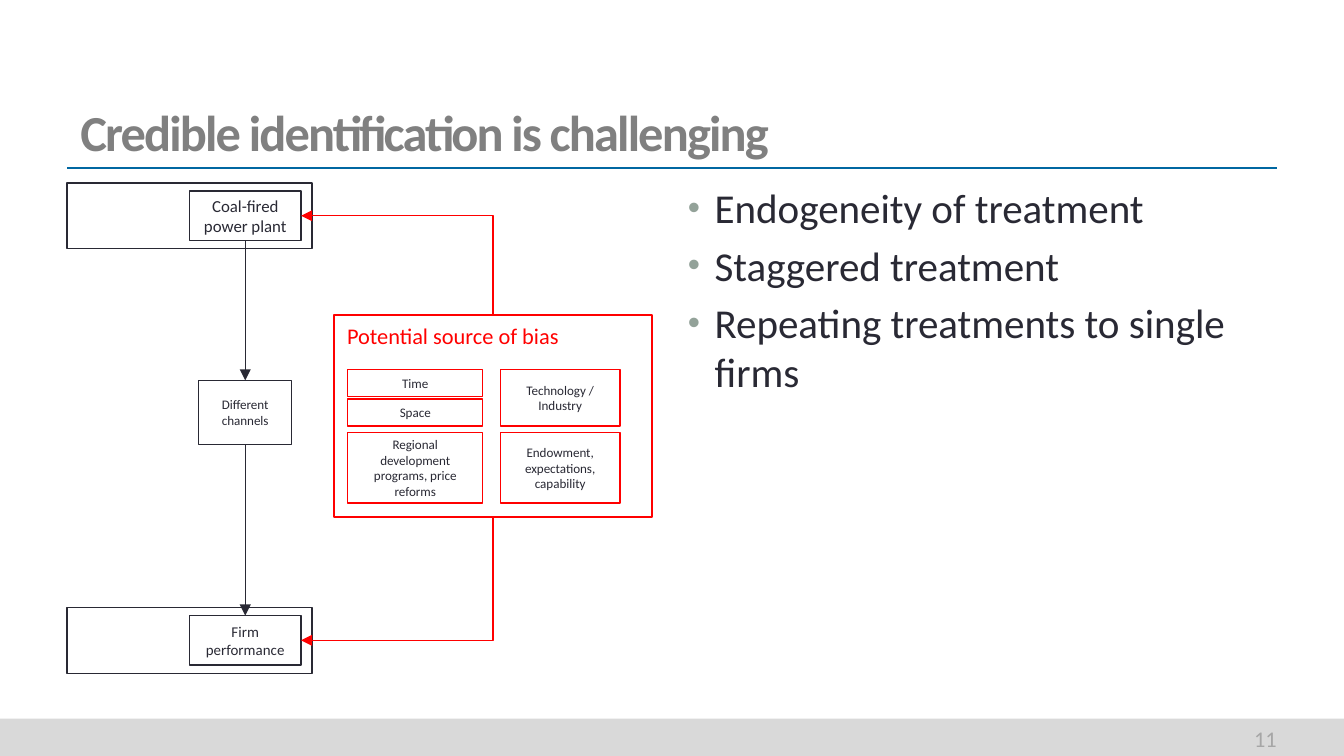
from pptx import Presentation
from pptx import util as u
from pptx.dml.color import RGBColor
from pptx.enum import shapes, text
from pptx.oxml.ns import qn
from lxml import etree

Pt = u.Pt
FONT = "Calibri"
COLORS = {"ink": "292934", "bias": "FF0000", "rule": "0067A1", "bar": "D9D9D9",
          "title": "808080", "number": "A6A6A6", "bullet": "93A299"}

# Content
TITLE = "Credible identification is challenging"
PAGE = "11"
POINTS = ["Endogeneity of treatment", "Staggered treatment",
          "Repeating treatments to single firms"]
BIAS = "Potential source of bias"
ENDS = [("Coal-fired power plant", 9, 98), ("Firm performance", 8, 325.5)]  # text, size, top
CHANNELS = "Different channels"
FACTORS = [  # text, column, top, height
    ("Space", 0, 213.8, 14.4),
    ("Technology / Industry", 1, 198, 30.3),
    ("Endowment, expectations, capability", 1, 231.8, 37.7),
    ("Regional development programs, price reforms", 0, 231.8, 37.7),
    ("Time", 0, 198, 14.4),
]

# Geometry
WIDTH, HEIGHT = 720, 405
MARGIN = 36
FRAME_W, FRAME_H = 131.2, 35.2
END_LEFT, END_W, END_H, END_INSET = 101.5, 59.8, 26.6, 4.3
CHANNEL_TOP, CHANNEL_W, CHANNEL_H = 203.8, 49.9, 34.2
BIAS_BOX = (178.8, 169, 170.5, 108)
COLUMNS = [(186.3, 72.3), (268, 64.3)]  # left, width

deck = Presentation()
deck.slide_width, deck.slide_height = Pt(WIDTH), Pt(HEIGHT)
slide = deck.slides.add_slide(deck.slide_layouts[6])


def rgb(name):
    return RGBColor.from_string(COLORS[name])


def write(shape, lines, size, color, bold=False, align=text.PP_ALIGN.LEFT, **frame_format):
    frame = shape.text_frame
    for key, value in {"word_wrap": True, **frame_format}.items():
        setattr(frame, key, value)
    for i, line in enumerate(lines):
        paragraph = frame.paragraphs[0] if i == 0 else frame.add_paragraph()
        paragraph.alignment = align
        run = paragraph.add_run()
        run.text = line
        for key, value in {"name": FONT, "size": Pt(size), "bold": bold}.items():
            setattr(run.font, key, value)
        run.font.color.rgb = rgb(color)
    return frame


def textbox(box, *args, **kwargs):
    return write(slide.shapes.add_textbox(*map(Pt, box)), *args, **kwargs)


def rect(box, line=None, weight=0.75, fill=None):
    shape = slide.shapes.add_shape(shapes.MSO_SHAPE.RECTANGLE, *map(Pt, box))
    shape.shadow.inherit = False
    if fill:
        shape.fill.solid()
        shape.fill.fore_color.rgb = rgb(fill)
    else:
        shape.fill.background()
    if line:
        shape.line.color.rgb = rgb(line)
        shape.line.width = Pt(weight)
    else:
        shape.line.fill.background()
    return shape


def label(box, words, size, line, weight=0.75):
    write(rect(box, line, weight), [words], size, "ink", align=text.PP_ALIGN.CENTER,
          vertical_anchor=text.MSO_ANCHOR.MIDDLE)


def connect(start, end, color, weight=0.75, arrow=None, bent=False):
    kind = shapes.MSO_CONNECTOR.ELBOW if bent else shapes.MSO_CONNECTOR.STRAIGHT
    line = slide.shapes.add_connector(kind, *map(Pt, (*start, *end)))
    line.line.color.rgb = rgb(color)
    line.line.width = Pt(weight)
    properties = line._element.spPr
    if bent:  # a single corner: across, then up or down
        properties.find(qn("a:prstGeom")).set("prst", "bentConnector2")
    if arrow:
        etree.SubElement(properties.find(qn("a:ln")), qn(arrow), type="triangle")
    etree.SubElement(properties, qn("a:effectLst"))


# Footer bar, title rule, title and page number
rect((0, 385, WIDTH, HEIGHT - 385), fill="bar")
connect((MARGIN, 90), (WIDTH - MARGIN, 90), "rule", 1)
title = textbox((MARGIN, 31.7, WIDTH - 2 * MARGIN, 58.3), [TITLE], 27, "title", bold=True,
                vertical_anchor=text.MSO_ANCHOR.BOTTOM)
title.paragraphs[0].runs[0].font._element.set("spc", "-100")
textbox((600, 386, 84, 19.4), [PAGE], 12, "number", align=text.PP_ALIGN.RIGHT,
        vertical_anchor=text.MSO_ANCHOR.MIDDLE, margin_right=0)

# Bullet points
points = textbox((361.4, 94.3, 324, 288), POINTS, 22, "ink")
for point in points.paragraphs:
    point.space_before = Pt(4.4)
    layout = point._p.get_or_add_pPr()
    layout.set("marL", str(Pt(14.4)))
    layout.set("indent", str(-Pt(14.4)))
    bullet_color = etree.SubElement(layout, qn("a:buClr"))
    etree.SubElement(bullet_color, qn("a:srgbClr"), val=COLORS["bullet"])
    etree.SubElement(layout, qn("a:buSzPct"), val="85000")
    etree.SubElement(layout, qn("a:buFont"), typeface="Arial")
    etree.SubElement(layout, qn("a:buChar"), char="•")

# Causal chain: plant, channels, firm
for words, size, top in ENDS:
    label((END_LEFT, top + END_INSET, END_W, END_H), words, size, "ink", 1)
    rect((MARGIN, top, FRAME_W, FRAME_H), "ink")
axis = END_LEFT + END_W / 2
plant_top, firm_top = (top + END_INSET for _, _, top in ENDS)
label((axis - CHANNEL_W / 2, CHANNEL_TOP, CHANNEL_W, CHANNEL_H), CHANNELS, 7, "ink")
for start, end in [(plant_top + END_H, CHANNEL_TOP), (CHANNEL_TOP + CHANNEL_H, firm_top)]:
    connect((axis, start), (axis, end), "ink", arrow="a:tailEnd")

# Sources of bias, pointing at both ends of the chain
left, top, width, height = BIAS_BOX
write(rect(BIAS_BOX, "bias", 1), [BIAS], 12, "bias", vertical_anchor=text.MSO_ANCHOR.TOP)
for words, column, factor_top, factor_height in FACTORS:
    factor_left, factor_width = COLUMNS[column]
    label((factor_left, factor_top, factor_width, factor_height), words, 7, "bias")
for end_top, edge in [(plant_top, top), (firm_top, top + height)]:
    connect((END_LEFT + END_W, end_top + END_H / 2), (left + width / 2, edge), "bias",
            arrow="a:headEnd", bent=True)

deck.save("out.pptx")
